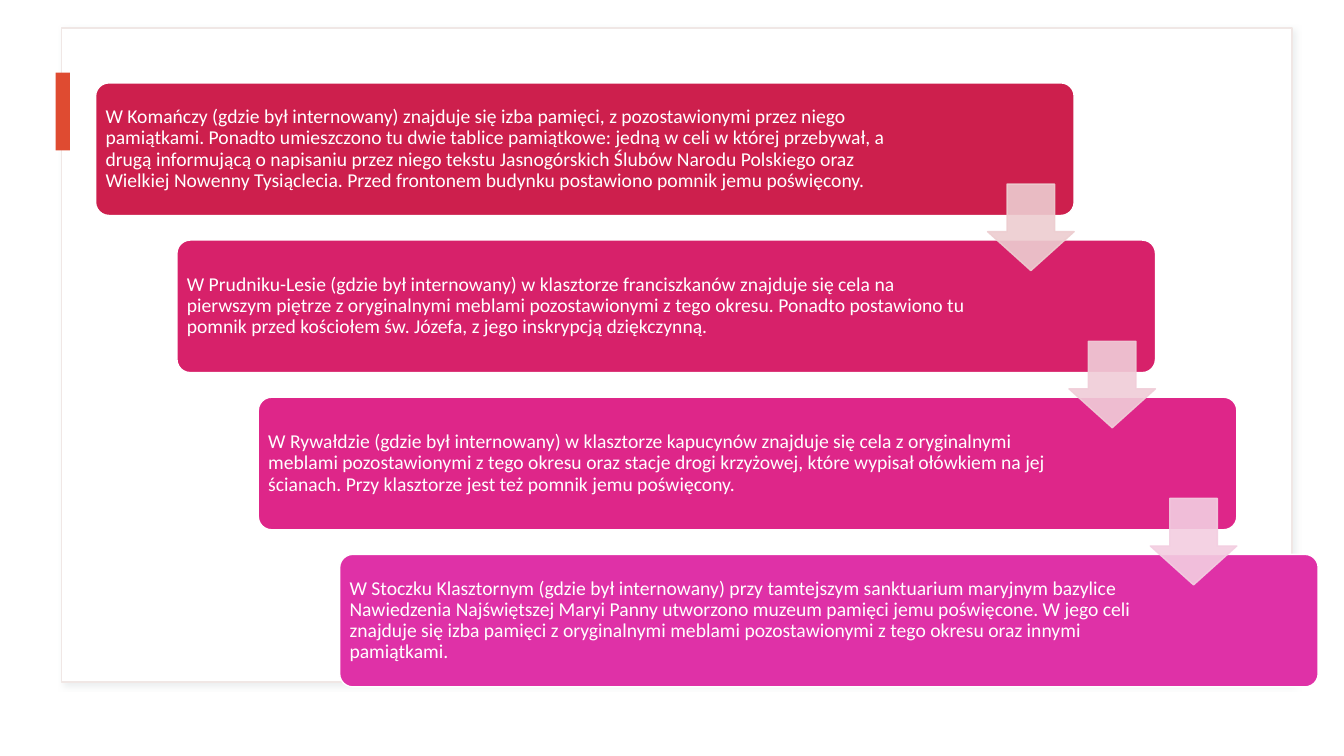
import pptx
import pptx.util
import pptx.dml.color
import pptx.enum.shapes
import pptx.enum.text
import pptx.oxml
import pptx.oxml.ns
import lxml.etree

Cm = pptx.util.Cm
Pt = pptx.util.Pt
SHAPES = pptx.enum.shapes.MSO_SHAPE


def color(value):
    return pptx.dml.color.RGBColor.from_string(value)


def add_block(kind, left, top, width, height, fill, line=None):
    shape = slide.shapes.add_shape(kind, Cm(left), Cm(top), Cm(width), Cm(height))
    shape.shadow.inherit = False
    shape.fill.solid()
    shape.fill.fore_color.rgb = color(fill)
    if line:
        shape.line.color.rgb = color(line)
        shape.line.width = Pt(1)
    else:
        shape.line.fill.background()
    return shape


presentation = pptx.Presentation()
presentation.slide_width = Cm(33.87)
presentation.slide_height = Cm(19.05)
slide = presentation.slides.add_slide(presentation.slide_layouts[6])

frame = add_block(SHAPES.RECTANGLE, 1.55, 0.71, 31.01, 16.48, "FFFFFF", "F0E7E5")
effects = frame._element.spPr.find(pptx.oxml.ns.qn("a:effectLst"))
effects.append(pptx.oxml.parse_xml(
    f'<a:outerShdw {pptx.oxml.ns.nsdecls("a")} blurRad="50800" dist="38100" dir="2700000">'
    '<a:srgbClr val="BCC7CA"><a:alpha val="30000"/></a:srgbClr></a:outerShdw>'))
add_block(SHAPES.RECTANGLE, 1.4, 1.83, 0.36, 1.96, "DF4B31")

steps = [
    ("CD1F4D", 20.78,
     "W Komańczy (gdzie był internowany) znajduje się izba pamięci, z pozostawionymi "
     "przez niego pamiątkami. Ponadto umieszczono tu dwie tablice pamiątkowe: jedną w celi "
     "w której przebywał, a drugą informującą o napisaniu przez niego tekstu Jasnogórskich "
     "Ślubów Narodu Polskiego oraz Wielkiej Nowenny Tysiąclecia. Przed frontonem budynku "
     "postawiono pomnik jemu poświęcony."),
    ("D7216A", 20.22,
     "W Prudniku-Lesie (gdzie był internowany) w klasztorze franciszkanów znajduje się cela "
     "na pierwszym piętrze z oryginalnymi meblami pozostawionymi z tego okresu. Ponadto "
     "postawiono tu pomnik przed kościołem św. Józefa, z jego inskrypcją dziękczynną."),
    ("DE2689", 20.27,
     "W Rywałdzie (gdzie był internowany) w klasztorze kapucynów znajduje się cela "
     "z oryginalnymi meblami pozostawionymi z tego okresu oraz stacje drogi krzyżowej, które "
     "wypisał ołówkiem na jej ścianach. Przy klasztorze jest też pomnik jemu poświęcony."),
    ("DF31A7", 20.22,
     "W Stoczku Klasztornym (gdzie był internowany) przy tamtejszym sanktuarium "
     "maryjnym bazylice Nawiedzenia Najświętszej Maryi Panny utworzono muzeum pamięci jemu "
     "poświęcone. W jego celi znajduje się izba pamięci z oryginalnymi meblami "
     "pozostawionymi z tego okresu oraz innymi pamiątkami."),
]
step_right, step_down = 2.05, 3.96

for index, (fill, text_width, text) in enumerate(steps):
    left = 2.41 + index * step_right
    top = 2.09 + index * step_down
    bar = add_block(SHAPES.ROUNDED_RECTANGLE, left, top, 24.66, 3.34, fill, "FFFFFF")
    bar.adjustments[0] = 0.1

    box = slide.shapes.add_textbox(Cm(left + 0.1), Cm(top + 0.1), Cm(text_width), Cm(3.14))
    frame_text = box.text_frame
    frame_text.word_wrap = True
    frame_text.vertical_anchor = pptx.enum.text.MSO_ANCHOR.MIDDLE
    frame_text.margin_left = frame_text.margin_right = Cm(0.15)
    frame_text.margin_top = frame_text.margin_bottom = Cm(0.15)
    paragraph = frame_text.paragraphs[0]
    paragraph.text = text
    paragraph.line_spacing = 0.9
    paragraph.font.name = "Calibri"
    paragraph.font.size = Pt(14)
    paragraph.font.color.rgb = color("FFFFFF")

for index, fill in enumerate(["EDCDD0", "F0CDD8", "F3CEE1"]):
    arrow = add_block(SHAPES.DOWN_ARROW, 24.89 + index * step_right,
                      4.64 + index * step_down, 2.18, 2.18, fill, fill)
    arrow.adjustments[0] = 0.55
    arrow.adjustments[1] = 0.45
    for tint in arrow._element.spPr.iter(pptx.oxml.ns.qn("a:srgbClr")):
        lxml.etree.SubElement(tint, pptx.oxml.ns.qn("a:alpha")).set("val", "90000")

presentation.save("out.pptx")
